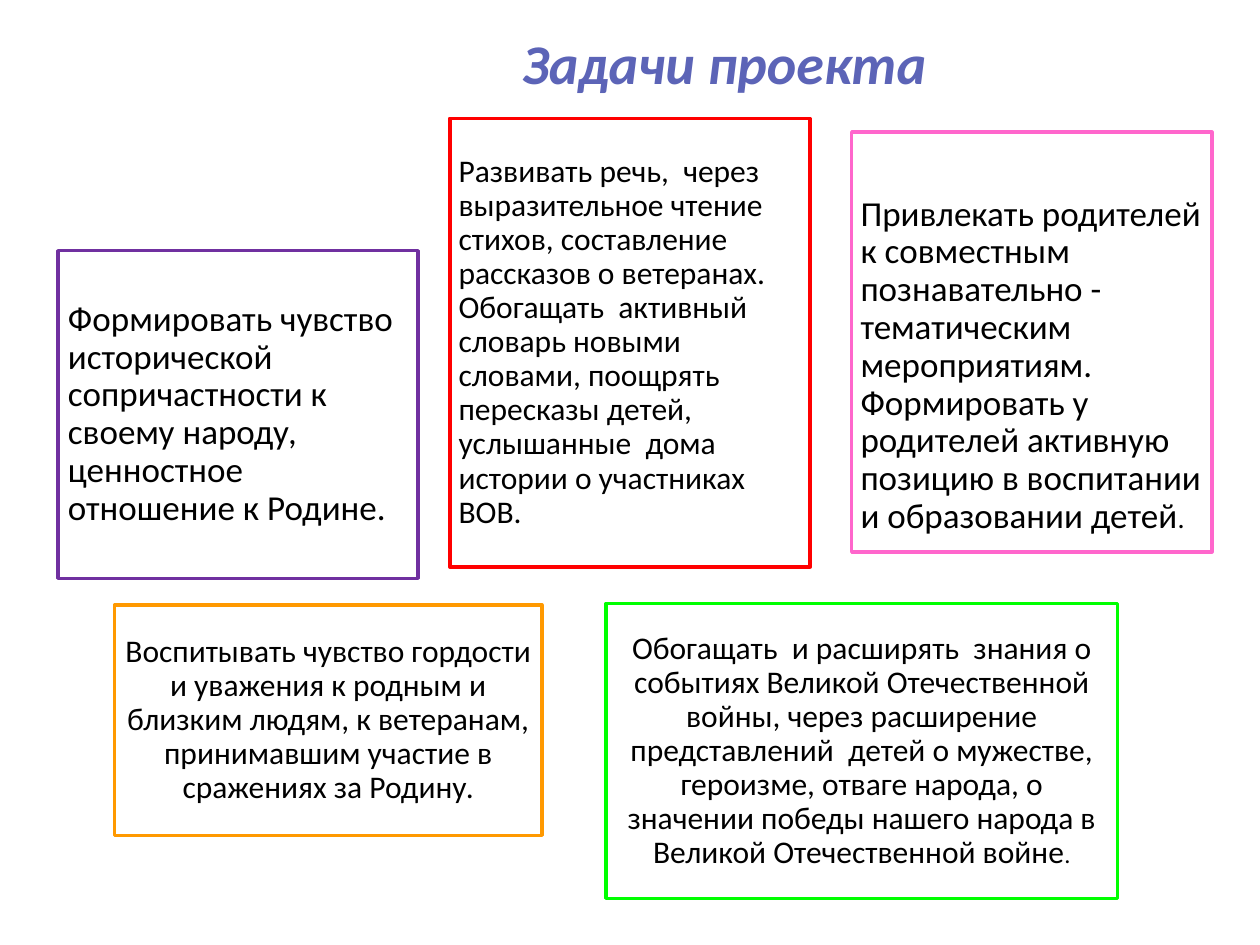
import dataclasses
import typing

import pptx
import pptx.dml.color
import pptx.enum.shapes
import pptx.enum.text
import pptx.slide
import pptx.text.text
import pptx.util

ALIGN = pptx.enum.text.PP_ALIGN
MIDDLE = pptx.enum.text.MSO_ANCHOR.MIDDLE
WIDE, HIGH = pptx.util.Inches(10), pptx.util.Inches(7.5)
COLS, ROWS = 100, 75


@dataclasses.dataclass(frozen=True)
class Theme:
    font: str = "Calibri"
    back: str = "FFFFFF"
    ink: str = "000000"
    head: str = "5C64B7"
    violet: str = "7030A0"
    red: str = "FF0000"
    pink: str = "FF66CC"
    orange: str = "FF9900"
    green: str = "00FF00"
    title: int = 32
    large: int = 20
    body: int = 18
    dot: int = 16
    small: int = 14
    edge: int = 2


THEME = Theme()


class Area(typing.NamedTuple):
    col: float
    row: float
    wide: float
    high: float


@dataclasses.dataclass(frozen=True)
class Task:
    area: Area
    line: str
    text: str
    size: int
    align: ALIGN = ALIGN.LEFT
    pad: float = 0.07
    drop: float = 0
    dot: int = 0


TOP = 28.6
TASKS = (
    Task(Area(4.6, 19.9, TOP, 26), THEME.violet,
         "Формировать чувство исторической сопричастности к своему народу, "
         "ценностное отношение к Родине.", THEME.large, pad=0.08),
    Task(Area(35.7, 9.4, TOP, 35.6), THEME.red,
         "Развивать речь,  через выразительное чтение стихов, составление "
         "рассказов о ветеранах. Обогащать  активный словарь новыми словами, "
         "поощрять пересказы детей, услышанные  дома истории о участниках ВОВ.",
         THEME.body),
    Task(Area(67.6, 10.5, TOP, 33.3), THEME.pink,
         "Привлекать родителей к совместным познавательно - тематическим "
         "мероприятиям. Формировать у родителей активную позицию в воспитании "
         "и образовании детей", THEME.large, drop=0.38, dot=THEME.dot),
    Task(Area(9.1, 48, 33.9, 18.3), THEME.orange,
         "Воспитывать чувство гордости и уважения к родным и близким людям, "
         "к ветеранам, принимавшим участие в сражениях за Родину.",
         THEME.body, ALIGN.CENTER),
    Task(Area(48.1, 47.9, 40.6, 23.4), THEME.green,
         "Обогащать  и расширять  знания о событиях Великой Отечественной "
         "войны, через расширение представлений  детей о мужестве, героизме, "
         "отваге народа, о значении победы нашего народа в Великой "
         "Отечественной войне", THEME.body, ALIGN.CENTER, dot=THEME.small),
)


def tint(code: str) -> pptx.dml.color.RGBColor:
    return pptx.dml.color.RGBColor.from_string(code)


def place(area: Area) -> tuple[int, int, int, int]:
    return (round(area.col * WIDE / COLS), round(area.row * HIGH / ROWS),
            round(area.wide * WIDE / COLS), round(area.high * HIGH / ROWS))


def style(font: pptx.text.text.Font, size: int, code: str) -> None:
    font.name = THEME.font
    font.size = pptx.util.Pt(size)
    font.color.rgb = tint(code)


def draw_title(slide: pptx.slide.Slide, text: str, area: Area) -> None:
    title = slide.shapes.title
    title.left, title.top, title.width, title.height = place(area)
    frame = title.text_frame
    frame.text = text
    frame.vertical_anchor = MIDDLE
    line = frame.paragraphs[0]
    line.alignment = ALIGN.CENTER
    font = line.runs[0].font
    style(font, THEME.title, THEME.head)
    font.bold = font.italic = True


def draw_task(slide: pptx.slide.Slide, task: Task) -> None:
    kind = pptx.enum.shapes.MSO_SHAPE.RECTANGLE
    box = slide.shapes.add_shape(kind, *place(task.area))
    box.shadow.inherit = False
    box.fill.background()
    box.line.color.rgb = tint(task.line)
    box.line.width = pptx.util.Pt(THEME.edge)
    frame = box.text_frame
    frame.word_wrap = True
    frame.vertical_anchor = MIDDLE
    pad = pptx.util.Inches(task.pad)
    frame.margin_left = frame.margin_right = frame.margin_bottom = pad
    frame.margin_top = pad + pptx.util.Inches(task.drop)
    frame.text = task.text
    para = frame.paragraphs[0]
    para.alignment = task.align
    para.line_spacing = 0.9
    style(para.runs[0].font, task.size, THEME.ink)
    if task.dot:
        stop = para.add_run()
        stop.text = "."
        style(stop.font, task.dot, THEME.ink)


def main() -> None:
    deck = pptx.Presentation()
    deck.slide_width, deck.slide_height = WIDE, HIGH
    slide = deck.slides.add_slide(deck.slide_layouts.get_by_name("Title Only"))
    slide.background.fill.solid()
    slide.background.fill.fore_color.rgb = tint(THEME.back)
    for task in TASKS:
        draw_task(slide, task)
    draw_title(slide, "Задачи проекта", Area(15, 0, 85, 9.9))
    deck.save("out.pptx")


if __name__ == "__main__":
    main()
